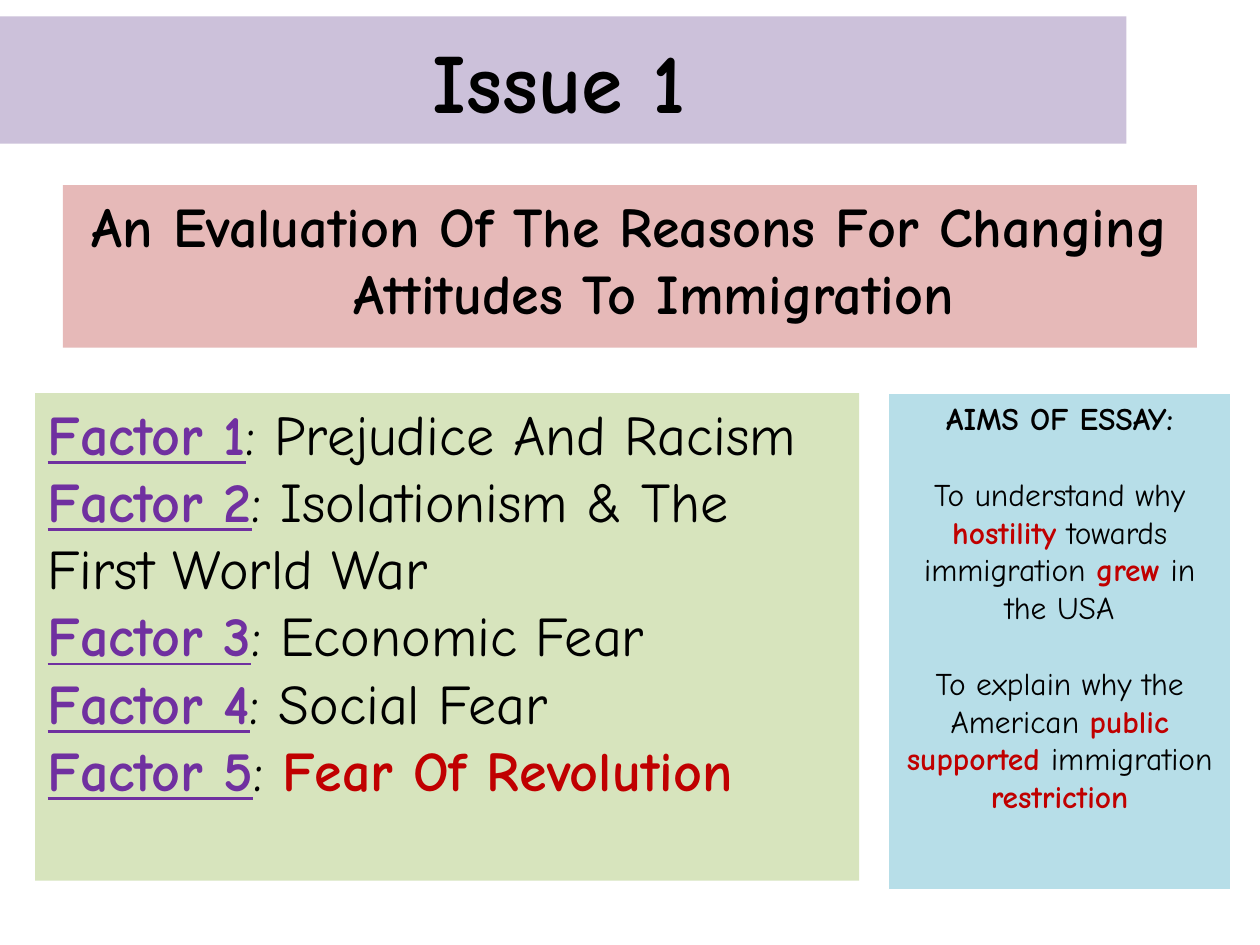
from pptx import Presentation
from pptx.dml.color import RGBColor
from pptx.enum.shapes import MSO_SHAPE as Shape
from pptx.enum.text import MSO_ANCHOR as Anchor, PP_ALIGN as Align
from pptx.util import Pt

PX = 9144  # EMU per px, at 100 px to the inch
FONT = "Comic Neue"

BLACK = RGBColor(0x00, 0x00, 0x00)
WHITE = RGBColor(0xFF, 0xFF, 0xFF)
PURPLE = RGBColor(0x70, 0x30, 0xA0)
RED = RGBColor(0xC0, 0x00, 0x00)
LILAC = RGBColor(0xCC, 0xC1, 0xDA)
PINK = RGBColor(0xE6, 0xB9, 0xB8)
GREEN = RGBColor(0xD7, 0xE4, 0xBD)
BLUE = RGBColor(0xB7, 0xDE, 0xE8)

# Run styles
PLAIN = {"color": BLACK}
BOLD = {"color": BLACK, "bold": True}
KEY = {"color": RED, "bold": True}
LABEL = {"color": PURPLE, "bold": True, "underline": True}

# Content: each paragraph is a list of (text, style) runs
TITLE = [[("Issue 1", BOLD)]]
QUESTION = [[("An Evaluation Of The Reasons For Changing Attitudes To Immigration", BOLD)]]
FACTORS = [
    ("Prejudice And Racism", PLAIN),
    ("Isolationism & The First World War", PLAIN),
    ("Economic Fear", PLAIN),
    ("Social Fear", PLAIN),
    ("Fear Of Revolution", KEY),
]
AIMS = [
    [("AIMS OF ESSAY:", BOLD)],
    [("To understand why ", PLAIN), ("hostility", KEY), (" towards immigration ", PLAIN),
     ("grew", KEY), (" in the USA", PLAIN)],
    [("To explain why the American ", PLAIN), ("public supported ", KEY),
     ("immigration ", PLAIN), ("restriction", KEY)],
]


def add_panel(slide, box, fill, paragraphs, size, align=Align.CENTER,
              anchor=Anchor.TOP, line=None, gap=0, hanging=0):
    """Add a filled rectangle holding paragraphs of styled runs."""
    shape = slide.shapes.add_shape(Shape.RECTANGLE, *(value * PX for value in box))
    shape.shadow.inherit = False
    shape.fill.solid()
    shape.fill.fore_color.rgb = fill
    if line is None:
        shape.line.fill.background()
    else:
        shape.line.color.rgb = line
        shape.line.width = Pt(0.75)

    frame = shape.text_frame
    frame.word_wrap = True
    frame.vertical_anchor = anchor
    for index, runs in enumerate(paragraphs):
        paragraph = frame.add_paragraph() if index else frame.paragraphs[0]
        paragraph.alignment = align
        if index and gap:
            paragraph.space_before = Pt(gap)
        if hanging:
            properties = paragraph._p.get_or_add_pPr()
            properties.set("marL", str(hanging * PX))
            properties.set("indent", str(-hanging * PX))
        for text, style in runs:
            add_run(paragraph, text, size, **style)


def add_run(paragraph, text, size, color, bold=False, underline=False):
    run = paragraph.add_run()
    run.text = text
    font = run.font
    font.name, font.size, font.bold, font.underline = FONT, Pt(size), bold, underline
    font.color.rgb = color


def main():
    presentation = Presentation()
    presentation.slide_width, presentation.slide_height = 1000 * PX, 750 * PX
    slide = presentation.slides.add_slide(presentation.slide_layouts[6])

    # Title band and essay question
    add_panel(slide, (-6, 13, 900, 101), LILAC, TITLE, 48, anchor=Anchor.MIDDLE)
    add_panel(slide, (50, 147, 900, 129), PINK, QUESTION, 32, hanging=38)

    # Numbered factors
    factors = []
    for number, (text, style) in enumerate(FACTORS, start=1):
        factors.append([(f"Factor {number}", LABEL), (": ", PLAIN), (text, style)])
    add_panel(slide, (28, 312, 654, 387), GREEN, factors, 32, align=Align.LEFT)

    # Aims, one line apart
    add_panel(slide, (705, 312, 272, 394), BLUE, AIMS, 18, line=WHITE, gap=21.6)

    presentation.save("out.pptx")


if __name__ == "__main__":
    main()
